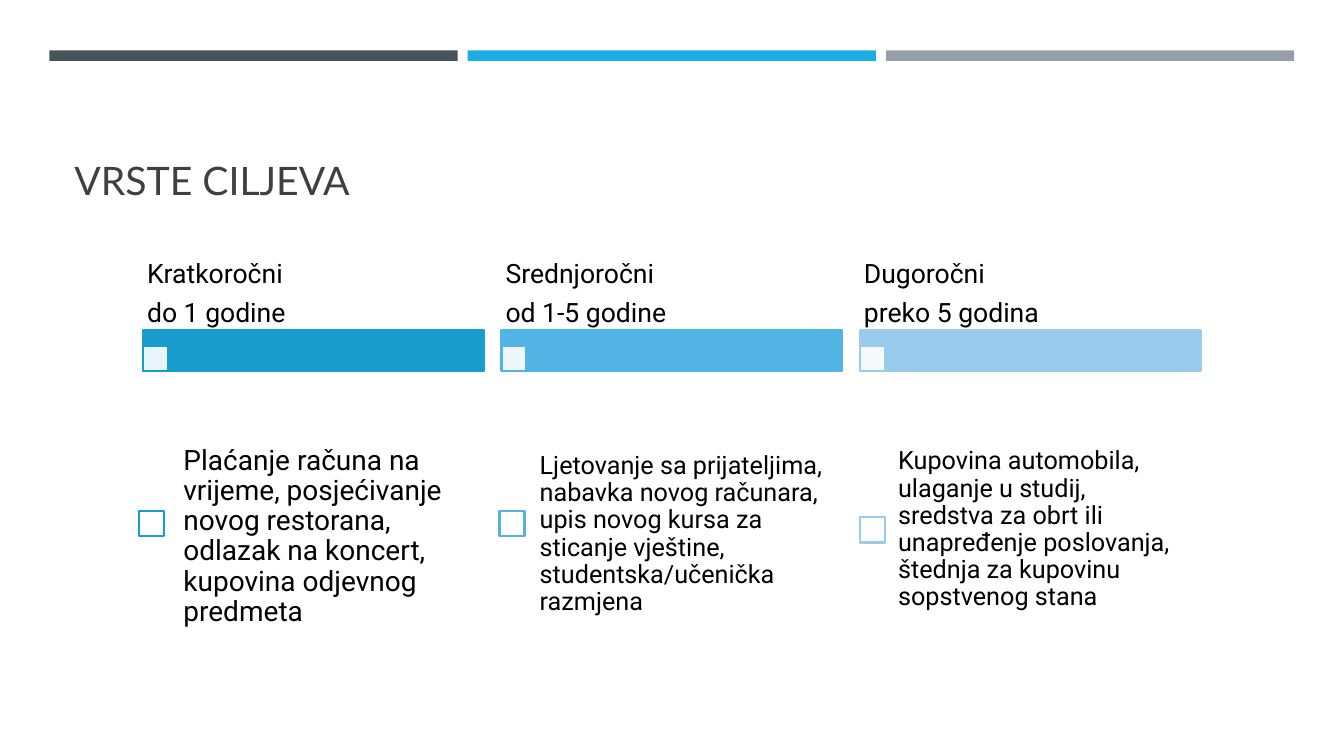
from lxml.etree import SubElement
from pptx import Presentation
from pptx.dml.color import RGBColor
from pptx.enum.shapes import MSO_SHAPE as Shape
from pptx.enum.text import MSO_ANCHOR as Anchor, PP_ALIGN as Align
from pptx.oxml.ns import qn
from pptx.util import Pt

# Content
TITLE = "VRSTE CILJEVA"
GOALS = [
    dict(heading=["Kratkoročni", "do 1 godine"], color="short",
         examples="Plaćanje računa na vrijeme, posjećivanje novog restorana, "
                  "odlazak na koncert, kupovina odjevnog predmeta",
         size=20, inset=11.5, height=213.8, box_shift=-2.9, box_top=365),
    dict(heading=["Srednjoročni", "od 1-5 godine"], color="medium",
         examples="Ljetovanje sa prijateljima, nabavka novog računara, upis novog "
                  "kursa za sticanje vještine, studentska/učenička razmjena",
         size=18, inset=10, height=210.2, box_shift=-1.4, box_top=365),
    dict(heading=["Dugoročni", "preko 5 godina"], color="long",
         examples="Kupovina automobila, ulaganje u studij, sredstva za obrt ili "
                  "unapređenje poslovanja, štednja za kupovinu sopstvenog stana",
         size=18, inset=10, height=203.8, box_shift=0, box_top=369.4),
]
COLORS = {
    "slate": "465359", "blue": "1CADE4", "gray": "969FA7",
    "short": "199DCF", "medium": "52B3E5", "long": "99CBEC",
    "title": "404040", "text": "000000", "white": "FFFFFF",
}
STRIPES = ["slate", "blue", "gray"]

# Layout, in points
STRIPE_LEFT, STRIPE_PITCH, STRIPE_WIDTH = 35.3, 298.8, 291.6
GOAL_LEFT, GOAL_PITCH, GOAL_WIDTH = 102.2, 256, 243.4
BOX = 18

deck = Presentation()
deck.slide_width, deck.slide_height = Pt(960), Pt(540)
slide = deck.slides.add_slide(deck.slide_layouts[6])


def rgb(name):
    return RGBColor.from_string(COLORS[name])


def add_rect(left, top, width, height, fill, outline=None, opacity=None):
    rect = slide.shapes.add_shape(
        Shape.RECTANGLE, Pt(left), Pt(top), Pt(width), Pt(height))
    rect.shadow.inherit = False
    rect.fill.solid()
    rect.fill.fore_color.rgb = rgb(fill)
    if opacity:
        tint = rect.fill._xPr.find(".//" + qn("a:srgbClr"))
        SubElement(tint, qn("a:alpha"), val=str(opacity * 1000))
    if outline:
        rect.line.color.rgb = rgb(outline)
        rect.line.width = Pt(1.75)
    else:
        rect.line.fill.background()


def add_text(left, top, width, height, lines, size, font, color="text",
             anchor=Anchor.MIDDLE, insets=(7.2, 3.6), spacing=0.9, after=0):
    frame = slide.shapes.add_textbox(
        Pt(left), Pt(top), Pt(width), Pt(height)).text_frame
    frame.word_wrap = True
    frame.vertical_anchor = anchor
    frame.margin_left = frame.margin_right = Pt(insets[0])
    frame.margin_top = frame.margin_bottom = Pt(insets[1])
    frame.text = "\n".join(lines)
    for paragraph in frame.paragraphs:
        paragraph.alignment = Align.LEFT
        paragraph.line_spacing = spacing
        paragraph.space_after = Pt(after)
        for run in paragraph.runs:
            run.font.size = Pt(size)
            run.font.name = font
            run.font.color.rgb = rgb(color)


# Stripes across the top
for i, stripe in enumerate(STRIPES):
    add_rect(STRIPE_LEFT + i * STRIPE_PITCH, 36, STRIPE_WIDTH, 7.5, stripe)

# Title
add_text(46.1, 55.4, 868.3, 93.6, [TITLE], 28, "Lato", "title", Anchor.BOTTOM)

# One column per kind of goal
for i, goal in enumerate(GOALS):
    left = GOAL_LEFT + i * GOAL_PITCH
    color = goal["color"]
    add_rect(left, 236.2, GOAL_WIDTH, 28.8, color, color)
    add_rect(left, 247, BOX, BOX, "white", color, opacity=90)
    add_text(left, 184.3, GOAL_WIDTH, 51.8, goal["heading"], 19, "Roboto",
             insets=(2.9, 2.2), after=7)
    add_rect(left + goal["box_shift"], goal["box_top"], BOX, BOX, "white", color)
    add_text(left + 17.3, 276.5, 226.8, goal["height"], [goal["examples"]],
             goal["size"], "Roboto", insets=(goal["inset"], goal["inset"]), after=7)

deck.save("out.pptx")
